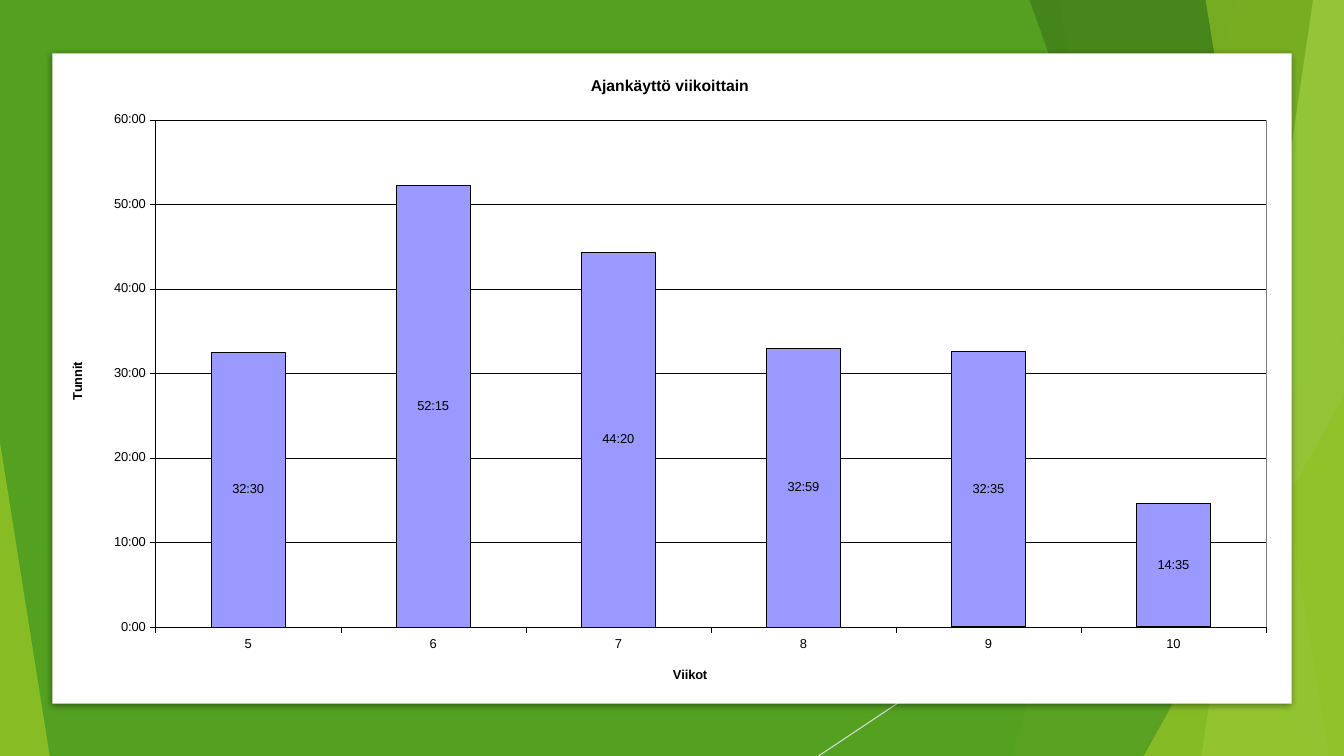
import math
import pptx
import pptx.chart.data
import pptx.dml.color
import pptx.enum.chart
import pptx.enum.shapes
import pptx.oxml
import pptx.oxml.ns
import pptx.util

RGB = pptx.dml.color.RGBColor
Pt = pptx.util.Pt
qn = pptx.oxml.ns.qn
SHAPE = pptx.enum.shapes.MSO_SHAPE
BLACK = RGB(0, 0, 0)
WHITE = RGB(255, 255, 255)
GREEN = RGB(0x54, 0xA0, 0x21)
LIME = RGB(0x90, 0xC2, 0x26)
MOSS = RGB(0x3F, 0x78, 0x19)
PALE = RGB(0xC0, 0xE4, 0x74)
SILVER = RGB(0xD9, 0xD9, 0xD9)
LILAC = RGB(0x99, 0x99, 0xFF)
FONT = "Arial"
SMALL = Pt(9.2)
HAIR = Pt(0.25)
HOURS = r"[h]\:mm"
TIMES = {"5": (32, 30), "6": (52, 15), "7": (44, 20),
         "8": (32, 59), "9": (32, 35), "10": (14, 35)}


def days(hour, minute):
    """Turn a time into days, rounded up so that its minute still shows."""
    return math.ceil((hour * 60 + minute) / 1440 * 10000) / 10000


def xml(body):
    """Parse an XML snippet that uses the a and c prefixes."""
    head, rest = body.split(">", 1)
    shut = "/" if head.endswith("/") else ""
    spaces = pptx.oxml.ns.nsdecls("a", "c")
    return pptx.oxml.parse_xml(f"{head.rstrip('/')} {spaces}{shut}>{rest}")


def part(box, x, y, w, h):
    """Turn percentages of a box into a smaller box."""
    left, top, wide, high = box
    return (round(left + x * wide / 100), round(top + y * high / 100),
            round(w * wide / 100), round(h * high / 100))


def paint(shape, color, alpha=100):
    """Give a shape a plain fill, no line and no shadow."""
    shape.shadow.inherit = False
    shape.line.fill.background()
    shape.fill.solid()
    shape.fill.fore_color.rgb = color
    if alpha < 100:
        tint = shape.element.spPr.find(".//" + qn("a:srgbClr"))
        tint.append(xml(f'<a:alpha val="{alpha * 1000}"/>'))


def facet(slide, box, upper, lower, color, alpha):
    """Draw a full-height facet that ends at the right edge of the box."""
    left, top, wide, high = box
    right, base = left + wide, top + high
    form = slide.shapes.build_freeform(round(left + upper * wide / 100), top)
    form.add_line_segments([(right, top), (right, base),
                            (round(left + lower * wide / 100), base)])
    paint(form.convert_to_shape(), color, alpha)


def wedge(slide, box, x, y, wide, apex, color, alpha):
    """Draw a right-angled triangle that stands on the base of the box."""
    shape = slide.shapes.add_shape(SHAPE.ISOSCELES_TRIANGLE,
                                   *part(box, x, y, wide, 100 - y))
    shape.adjustments[0] = apex
    paint(shape, color, alpha)


def backdrop(slide, box):
    """Draw the green ground with its line and facets."""
    paint(slide.shapes.add_shape(SHAPE.RECTANGLE, *box), GREEN)
    x, y, wide, high = part(box, 60.9, 53.7, 39.1, 46.3)
    line = slide.shapes.add_connector(
        pptx.enum.shapes.MSO_CONNECTOR.STRAIGHT, x + wide, y, x, y + high)
    line.line.color.rgb = SILVER
    line.line.width = Pt(0.75)
    line.element.spPr.append(xml("<a:effectLst/>"))
    facet(slide, box, 92.1, 75.3, LIME, 30)
    facet(slide, box, 78.8, 88.7, LIME, 20)
    wedge(slide, box, 73.3, 44.4, 26.7, 1, GREEN, 72)
    facet(slide, box, 76.6, 96.8, MOSS, 70)
    facet(slide, box, 97.7, 89.4, PALE, 70)
    facet(slide, box, 89.7, 98.9, LIME, 65)
    wedge(slide, box, 85.1, 52.4, 14.9, 1, LIME, 80)
    wedge(slide, box, 0, 58.5, 3.7, 0, LIME, 85)


def panel(slide, box):
    """Draw the white panel with its soft shadow."""
    shape = slide.shapes.add_shape(SHAPE.RECTANGLE, *box)
    paint(shape, WHITE)
    shape.element.spPr.find(qn("a:effectLst")).append(xml(
        f'<a:outerShdw blurRad="{Pt(5)}" dist="{Pt(1.4)}" dir="5400000">'
        '<a:srgbClr val="000000"><a:alpha val="43000"/></a:srgbClr>'
        '</a:outerShdw>'))


def place(node, index, **spots):
    """Put a manual layout, in percent, into a chart node at the index."""
    for old in node.findall(qn("c:layout")):
        node.remove(old)
    modes = "".join(f'<c:{k}Mode val="edge"/>' for k in "xy")
    sizes = "".join(f'<c:{k} val="{v / 100:.4f}"/>' for k, v in spots.items())
    inner = '<c:layoutTarget val="inner"/>' if "w" in spots else ""
    node.insert(index, xml("<c:layout><c:manualLayout>" + inner + modes
                           + sizes + "</c:manualLayout></c:layout>"))


def label(title, text, size, x, y):
    """Write a bold chart or axis title at a percentage of the chart."""
    title.text_frame.text = text
    font = title.text_frame.paragraphs[0].runs[0].font
    font.name, font.size, font.bold = FONT, size, True
    font.color.rgb = BLACK
    place(title._element, 1, x=x, y=y)


def stroke(line, width):
    """Make a line black and of the given width."""
    line.color.rgb = BLACK
    line.width = width


def graph(slide, box):
    """Draw the column chart of hours by week."""
    data = pptx.chart.data.CategoryChartData(number_format=HOURS)
    data.categories = list(TIMES)
    data.add_series("Series 1", [days(*time) for time in TIMES.values()])
    kind = pptx.enum.chart.XL_CHART_TYPE.COLUMN_STACKED
    chart = slide.shapes.add_chart(kind, *box, data).chart
    chart.has_legend = False
    chart.font.name, chart.font.size = FONT, SMALL
    chart.font.color.rgb = BLACK
    chart.has_title = True
    label(chart.chart_title, "Ajankäyttö viikoittain", Pt(11.2), 43.35, 2.8)

    weeks, hours = chart.category_axis, chart.value_axis
    label(weeks.axis_title, "Viikot", SMALL, 50, 94)
    label(hours.axis_title, "Tunnit", SMALL, 1.4, 47.1)
    for axis in (weeks, hours):
        axis.major_tick_mark = pptx.enum.chart.XL_TICK_MARK.OUTSIDE
        stroke(axis.format.line, HAIR)
    hours.minimum_scale, hours.maximum_scale = 0, 60 / 24
    hours.major_unit = 10 / 24
    hours.has_major_gridlines = True
    stroke(hours.major_gridlines.format.line, HAIR)
    hours.tick_labels.number_format = HOURS
    hours.tick_labels.number_format_is_linked = False

    plot = chart.plots[0]
    plot.gap_width, plot.overlap, plot.vary_by_categories = 150, 100, False
    bars = plot.series[0]
    bars.format.fill.solid()
    bars.format.fill.fore_color.rgb = LILAC
    stroke(bars.format.line, HAIR)
    for week in (4, 5):
        bar = bars.points[week].format
        bar.fill.solid()
        bar.fill.fore_color.rgb = LILAC
        stroke(bar.line, Pt(1))
    tags = bars.data_labels
    tags.show_value = True
    tags.number_format, tags.number_format_is_linked = HOURS, False
    tags.position = pptx.enum.chart.XL_LABEL_POSITION.CENTER
    tags.font.name, tags.font.size = FONT, SMALL
    tags.font.color.rgb = BLACK

    area = chart.element.find(".//" + qn("c:plotArea"))
    place(area, 0, x=8.55, y=10.2, w=89.4, h=78)
    area.append(xml('<c:spPr><a:noFill/><a:ln w="3175"><a:solidFill>'
                    '<a:srgbClr val="808080"/></a:solidFill></a:ln></c:spPr>'))


def main():
    """Build the slide and save it."""
    deck = pptx.Presentation()
    deck.slide_width = pptx.util.Inches(13.33)
    deck.slide_height = pptx.util.Inches(7.5)
    slide = deck.slides.add_slide(deck.slide_layouts[6])
    page = (0, 0, deck.slide_width, deck.slide_height)
    backdrop(slide, page)
    panel(slide, part(page, 3.9, 7.07, 92.2, 86))
    graph(slide, part(page, 3.68, 7.07, 92.42, 86))
    deck.save("out.pptx")


if __name__ == "__main__":
    main()
